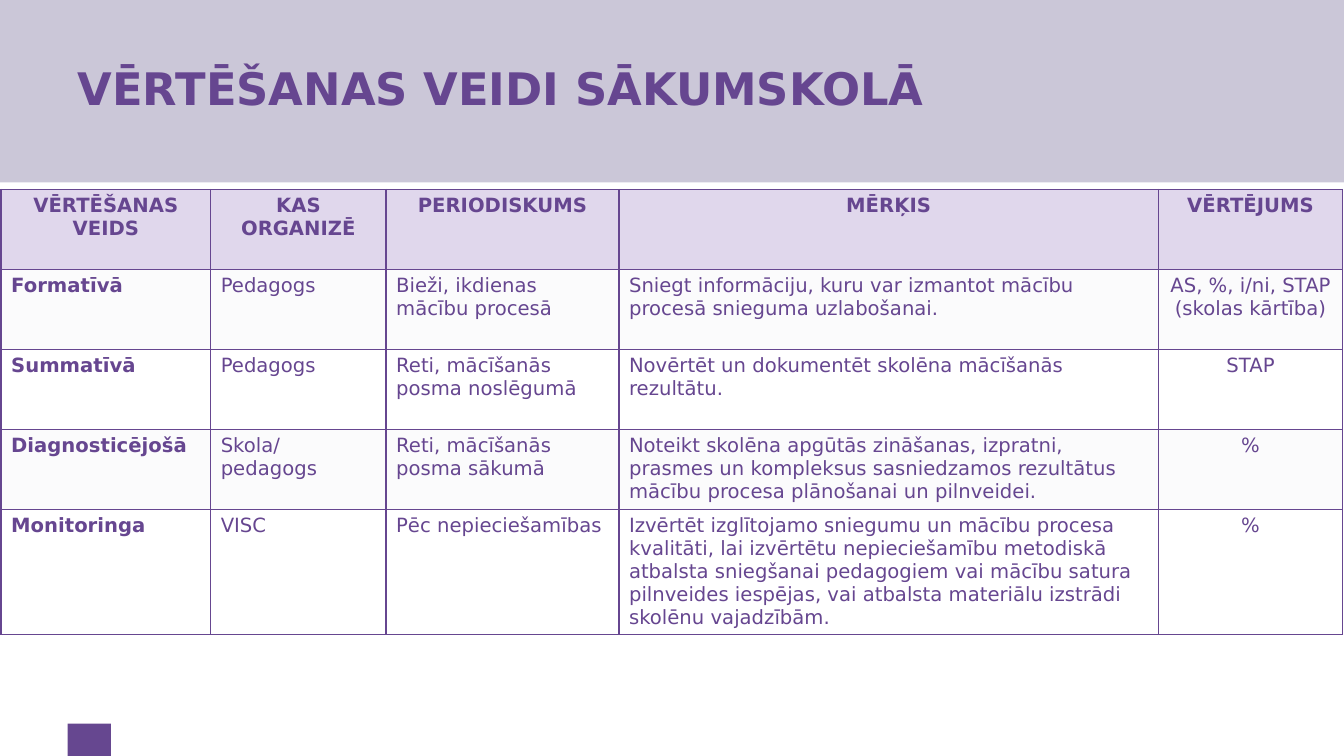
from lxml import etree
from pptx import Presentation
from pptx.dml.color import RGBColor
from pptx.enum.shapes import MSO_SHAPE
from pptx.enum.text import MSO_ANCHOR, MSO_AUTO_SIZE, PP_ALIGN
from pptx.oxml.ns import qn
from pptx.util import Inches, Pt

RECTANGLE = MSO_SHAPE.RECTANGLE
MIDDLE = MSO_ANCHOR.MIDDLE
NO_AUTOFIT = MSO_AUTO_SIZE.NONE
LEFT, CENTER = PP_ALIGN.LEFT, PP_ALIGN.CENTER

PURPLE = RGBColor(0x66, 0x46, 0x90)
MARKER = RGBColor(0x66, 0x47, 0x90)
BAND = RGBColor(0xCB, 0xC7, 0xD8)
HEADER = RGBColor(0xE0, 0xD7, 0xEC)
STRIPE = RGBColor(0xEF, 0xEC, 0xF3)

TITLE_ONLY = 5
STRIPE_ALPHA = 20
COLUMN_SHARES = (15.6, 13.05, 17.33, 40.13, 13.73)
ROW_SHARE = 10.58

ASSESSMENT_TYPES = [
    ("VĒRTĒŠANAS\nVEIDS", "KAS ORGANIZĒ", "PERIODISKUMS", "MĒRĶIS", "VĒRTĒJUMS"),
    ("Formatīvā", "Pedagogs", "Bieži, ikdienas mācību procesā",
     "Sniegt informāciju, kuru var izmantot mācību procesā snieguma uzlabošanai.",
     "AS, %, i/ni, STAP\n(skolas kārtība)"),
    ("Summatīvā", "Pedagogs", "Reti, mācīšanās posma noslēgumā",
     "Novērtēt un dokumentēt skolēna mācīšanās rezultātu.", "STAP"),
    ("Diagnosticējošā", "Skola/ pedagogs", "Reti, mācīšanās posma sākumā",
     "Noteikt skolēna apgūtās zināšanas, izpratni, prasmes un kompleksus "
     "sasniedzamos rezultātus mācību procesa plānošanai un pilnveidei.", "%"),
    ("Monitoringa", "VISC", "Pēc nepieciešamības",
     "Izvērtēt izglītojamo sniegumu un mācību procesa kvalitāti, lai izvērtētu "
     "nepieciešamību metodiskā atbalsta sniegšanai pedagogiem vai mācību satura "
     "pilnveides iespējas, vai atbalsta materiālu izstrādi skolēnu vajadzībām.", "%"),
]


def write_text(frame, text, size=14, bold=False, align=LEFT, spacing=1.0,
               color=PURPLE, font="DejaVu Sans"):
    """Fill a text frame, one paragraph per line of text."""
    frame.text = text
    for paragraph in frame.paragraphs:
        paragraph.alignment = align
        paragraph.line_spacing = spacing
        for run in paragraph.runs:
            run.font.name = font
            run.font.size = Pt(size)
            run.font.bold = bold
            run.font.color.rgb = color


def draw_borders(cell, color=PURPLE, width=1):
    properties = cell._tc.get_or_add_tcPr()
    for side in ("a:lnL", "a:lnR", "a:lnT", "a:lnB"):
        line = etree.SubElement(properties, qn(side), w=str(Pt(width)))
        fill = etree.SubElement(line, qn("a:solidFill"))
        etree.SubElement(fill, qn("a:srgbClr"), val=str(color))


def fill_cell(cell, color=None, alpha=100):
    if color is None:
        cell.fill.background()
        return
    cell.fill.solid()
    cell.fill.fore_color.rgb = color
    if alpha < 100:
        tint = cell._tc.tcPr.find(".//" + qn("a:solidFill") + "/" + qn("a:srgbClr")
                                  + "[@val='" + str(color) + "']")
        etree.SubElement(tint, qn("a:alpha"), val=str(alpha * 1000))


class SlideBuilder:
    """Places elements by percent of the slide's width and height."""

    def __init__(self, presentation):
        self.width = presentation.slide_width
        self.height = presentation.slide_height
        self.slide = presentation.slides.add_slide(
            presentation.slide_layouts[TITLE_ONLY])

    def across(self, share):
        return round(self.width * share / 100)

    def down(self, share):
        return round(self.height * share / 100)

    def box(self, left, top, width, height):
        return (self.across(left), self.down(top),
                self.across(width), self.down(height))

    def background_block(self, color, *shares):
        block = self.slide.shapes.add_shape(RECTANGLE, *self.box(*shares))
        block.shadow.inherit = False
        block.fill.solid()
        block.fill.fore_color.rgb = color
        block.line.fill.background()
        # Behind the title: after the two property elements of the tree
        self.slide.shapes.element.insert(2, block.element)

    def title(self, text, *shares):
        heading = self.slide.shapes.title
        heading.left, heading.top, heading.width, heading.height = self.box(*shares)
        frame = heading.text_frame
        frame.word_wrap = True
        frame.auto_size = NO_AUTOFIT
        frame.vertical_anchor = MIDDLE
        write_text(frame, text, size=32, bold=True, spacing=0.9)

    def table(self, rows, left, top):
        shares = (left, top, sum(COLUMN_SHARES), ROW_SHARE * len(rows))
        grid = self.slide.shapes.add_table(
            len(rows), len(COLUMN_SHARES), *self.box(*shares)).table
        for column, share in zip(grid.columns, COLUMN_SHARES):
            column.width = self.across(share)
        last = len(COLUMN_SHARES) - 1
        for r, row in enumerate(rows):
            grid.rows[r].height = self.down(ROW_SHARE)
            for c, text in enumerate(row):
                cell = grid.cell(r, c)
                write_text(cell.text_frame, text, bold=r == 0 or c == 0,
                           align=CENTER if r == 0 or c == last else LEFT)
                draw_borders(cell)
                if r == 0:
                    fill_cell(cell, HEADER)
                elif r % 2:
                    fill_cell(cell, STRIPE, STRIPE_ALPHA)
                else:
                    fill_cell(cell)


def main():
    presentation = Presentation()
    presentation.slide_width = Inches(13.33)
    presentation.slide_height = Inches(7.5)
    page = SlideBuilder(presentation)

    # Header band and footer marker
    page.background_block(MARKER, 5.03, 95.73, 3.23, 4.27)
    page.background_block(BAND, 0, 0, 100, 24.13)

    # Title
    page.title("VĒRTĒŠANAS VEIDI SĀKUMSKOLĀ", 5.03, 3.73, 91.3, 16.67)

    # Types of assessment
    page.table(ASSESSMENT_TYPES, 0.08, 25.07)

    presentation.save("out.pptx")


if __name__ == "__main__":
    main()
